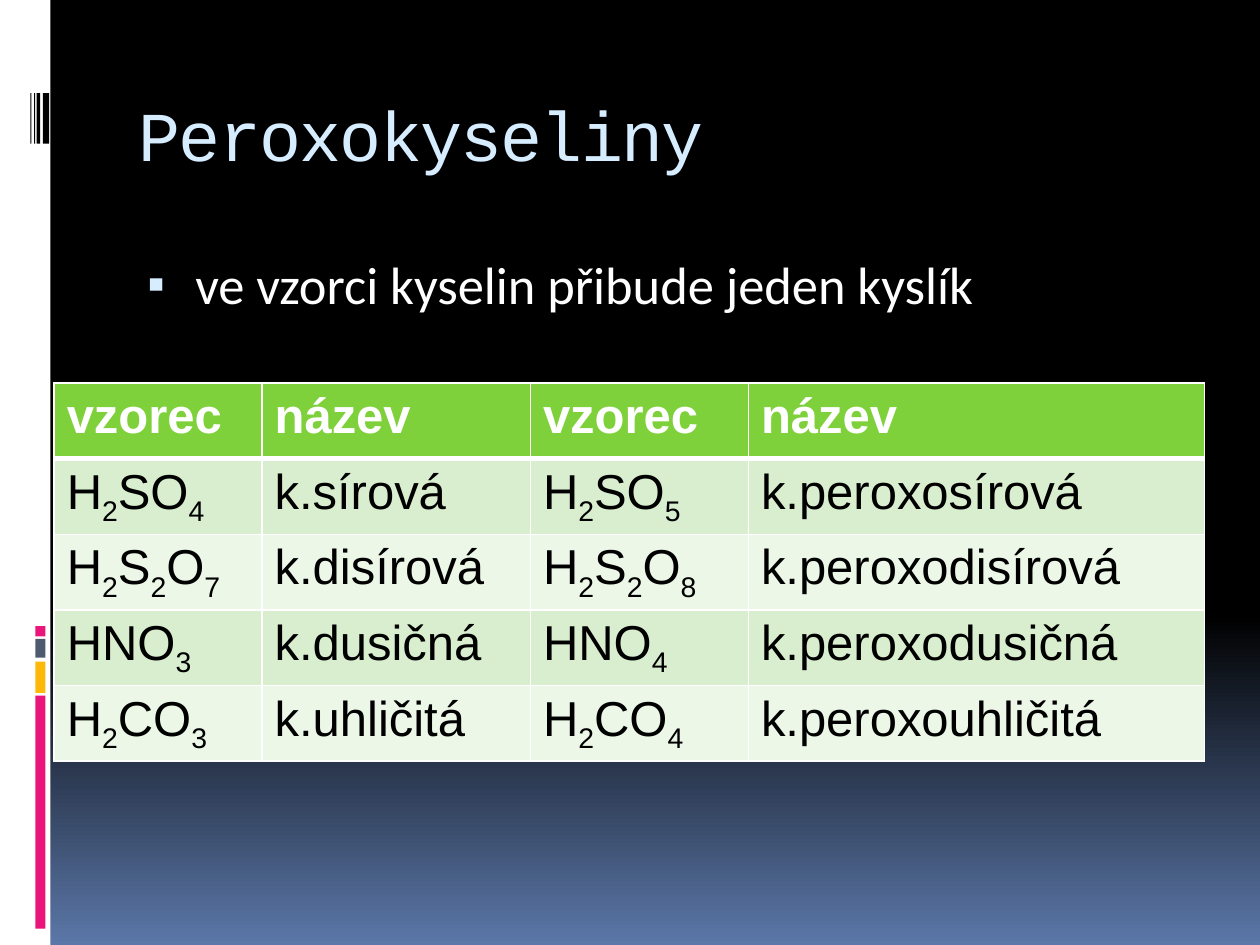
from dataclasses import dataclass
from itertools import groupby

from lxml.etree import SubElement
from pptx import Presentation
from pptx.dml.color import RGBColor
from pptx.enum.shapes import MSO_SHAPE
from pptx.enum.text import MSO_ANCHOR, MSO_AUTO_SIZE, PP_ALIGN
from pptx.oxml.ns import qn
from pptx.util import Inches, Pt

WHITE, BLACK, PINK, PALE_BLUE = "FFFFFF", "000000", "EA157A", "D6ECFF"
HEADER_GREEN, BANDS = "7FD13B", ("D8EECE", "ECF7E8")
COLUMN_WIDTHS = (1.65, 2.13, 1.73, 3.62)
ROW_HEIGHT = 0.6
ACIDS = (
    ("vzorec", "název", "vzorec", "název"),
    ("H2SO4", "k.sírová", "H2SO5", "k.peroxosírová"),
    ("H2S2O7", "k.disírová", "H2S2O8", "k.peroxodisírová"),
    ("HNO3", "k.dusičná", "HNO4", "k.peroxodusičná"),
    ("H2CO3", "k.uhličitá", "H2CO4", "k.peroxouhličitá"),
)


@dataclass(frozen=True)
class Bar:
    left: float
    top: float
    width: float
    height: float
    color: str


BARS = (
    Bar(0, 0, 0.4, 7.5, WHITE),
    Bar(0.28, 5.52, 0.08, 1.85, PINK),
    Bar(0.28, 5.25, 0.08, 0.25, "FEB80A"),
    Bar(0.28, 5.07, 0.08, 0.15, "4E5B6F"),
    Bar(0.28, 4.97, 0.08, 0.08, PINK),
    *(Bar(left, 0.74, width, 0.4, BLACK)
      for left, width in ((0.34, 0.05), (0.29, 0.03), (0.27, 0.01), (0.24, 0.01))),
)


def rgb(color: str) -> RGBColor:
    return RGBColor.from_string(color)


def style_font(font, family: str, size: float, color: str, bold: bool = False) -> None:
    font.name, font.size, font.bold = family, Pt(size), bold
    font.color.rgb = rgb(color)


def paint_background(slide) -> None:
    fill = slide.background.fill
    fill.gradient()
    fill.gradient_angle = 270
    for stop, position, color in zip(fill.gradient_stops, (0.65, 1), (BLACK, "5B77A8")):
        stop.position = position
        stop.color.rgb = rgb(color)


def draw_bar(slide, bar: Bar) -> None:
    strip = slide.shapes.add_shape(
        MSO_SHAPE.RECTANGLE, Inches(bar.left), Inches(bar.top),
        Inches(bar.width), Inches(bar.height))
    strip.shadow.inherit = False
    strip.fill.solid()
    strip.fill.fore_color.rgb = rgb(bar.color)
    strip.line.fill.background()


def write_placeholder(placeholder, text: str, top: float, height: float, anchor):
    placeholder.left, placeholder.top = Inches(1), Inches(top)
    placeholder.width, placeholder.height = Inches(8.5), Inches(height)
    frame = placeholder.text_frame
    frame.text = text
    frame.auto_size = MSO_AUTO_SIZE.NONE
    frame.vertical_anchor = anchor
    paragraph = frame.paragraphs[0]
    paragraph.alignment = PP_ALIGN.LEFT
    return paragraph


def write_title(slide) -> None:
    heading = write_placeholder(
        slide.shapes.title, "Peroxokyseliny", 0.56, 1, MSO_ANCHOR.MIDDLE).runs[0]
    style_font(heading.font, "Courier New", 40, PALE_BLUE)
    heading.font._element.set("spc", "-100")


def write_rule(slide) -> None:
    rule = write_placeholder(
        slide.placeholders[1], "ve vzorci kyselin přibude jeden kyslík",
        1.95, 5, MSO_ANCHOR.TOP)
    rule.space_before = Pt(7)
    style_font(rule.runs[0].font, "Calibri", 30, WHITE)
    properties = rule._p.get_or_add_pPr()
    properties.set("marL", str(Inches(0.45)))
    properties.set("indent", str(Inches(-0.38)))
    bullet_color = SubElement(properties, qn("a:buClr"))
    SubElement(bullet_color, qn("a:srgbClr"), val=PALE_BLUE)
    SubElement(properties, qn("a:buSzPct"), val="95000")
    SubElement(properties, qn("a:buFont"), typeface="Arial")
    SubElement(properties, qn("a:buChar"), char="▪")


def draw_borders(cell, bottom: float) -> None:
    properties = cell._tc.get_or_add_tcPr()
    widths = {"a:lnL": 1, "a:lnR": 1, "a:lnT": 1, "a:lnB": bottom}
    for position, (side, width) in enumerate(widths.items()):
        border = SubElement(properties, qn(side), w=str(Pt(width)))
        SubElement(SubElement(border, qn("a:solidFill")), qn("a:srgbClr"), val=WHITE)
        properties.insert(position, border)


def write_cell(cell, text: str, row: int) -> None:
    is_header = row == 0
    cell.fill.solid()
    cell.fill.fore_color.rgb = rgb(HEADER_GREEN if is_header else BANDS[(row - 1) % 2])
    draw_borders(cell, 3 if is_header else 1)
    paragraph = cell.text_frame.paragraphs[0]
    for is_index, symbols in groupby(text, str.isdigit):
        part = paragraph.add_run()
        part.text = "".join(symbols)
        style_font(part.font, "Arial", 28, WHITE if is_header else BLACK, is_header)
        if is_index:
            part.font._element.set("baseline", "-25000")


def draw_acids(slide) -> None:
    acids = slide.shapes.add_table(
        len(ACIDS), len(COLUMN_WIDTHS), Inches(0.43), Inches(3.04),
        Inches(sum(COLUMN_WIDTHS)), Inches(ROW_HEIGHT * len(ACIDS))).table
    for column, width in zip(acids.columns, COLUMN_WIDTHS):
        column.width = Inches(width)
    for row, entries in enumerate(ACIDS):
        acids.rows[row].height = Inches(ROW_HEIGHT)
        for column, text in enumerate(entries):
            write_cell(acids.cell(row, column), text, row)


def main() -> None:
    presentation = Presentation()
    presentation.slide_width, presentation.slide_height = Inches(10), Inches(7.5)
    slide = presentation.slides.add_slide(presentation.slide_layouts[1])
    paint_background(slide)
    for bar in BARS:
        draw_bar(slide, bar)
    write_title(slide)
    write_rule(slide)
    draw_acids(slide)
    presentation.save("out.pptx")


if __name__ == "__main__":
    main()
